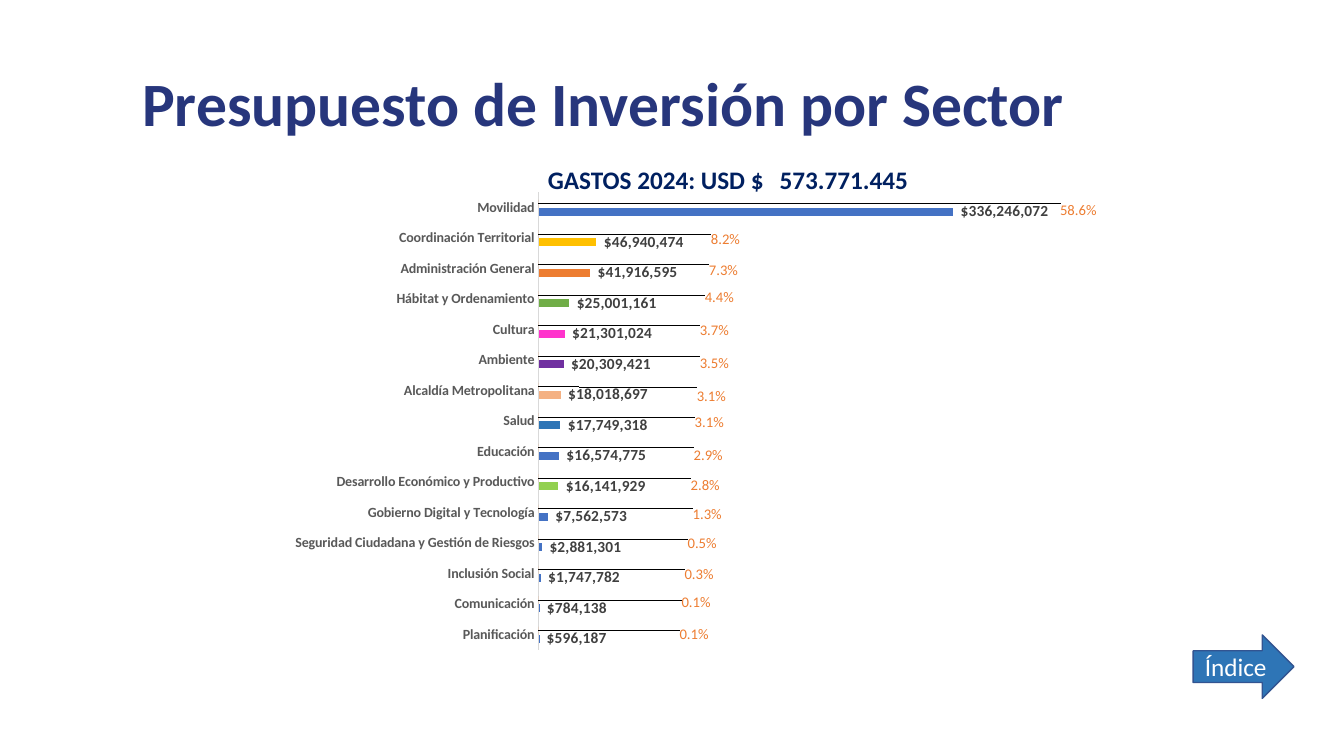
"""Build the slide with the investment budget by sector."""
from dataclasses import dataclass

from pptx import Presentation
from pptx.chart.data import CategoryChartData
from pptx.dml.color import RGBColor
from pptx.enum.chart import XL_CHART_TYPE, XL_LABEL_POSITION, XL_TICK_MARK
from pptx.enum.shapes import MSO_SHAPE
from pptx.enum.text import MSO_ANCHOR, PP_ALIGN
from pptx.oxml import parse_xml
from pptx.oxml.ns import nsdecls
from pptx.util import Cm, Pt

BAR = XL_CHART_TYPE.BAR_CLUSTERED
OUTSIDE_END = XL_LABEL_POSITION.OUTSIDE_END
NO_TICK = XL_TICK_MARK.NONE
ARROW = MSO_SHAPE.RIGHT_ARROW
LEFT, CENTER = PP_ALIGN.LEFT, PP_ALIGN.CENTER
MIDDLE = MSO_ANCHOR.MIDDLE

MONEY = r'_ "$"* #,##0_ ;_ "$"* \-#,##0_ ;_ "$"* "-"??_ ;_ @_ '
PERCENT = "0.0%"
AXIS_MAX = 400_000_000
PLOT_AREA = {"x": 0.339, "y": 0.027, "w": 0.486, "h": 0.946}

# sector, amount, share, bar colour, share label shift in % of the chart (x, y)
SECTORS = [
    ("Planificación", 596187, 0.001, None, 13.5, 0.8),
    ("Comunicación", 784138, 0.001, None, 13.7, 0.5),
    ("Inclusión Social", 1747782, 0.003, None, 14, 1),
    ("Seguridad Ciudadana y Gestión de Riesgos", 2881301, 0.005, None, 14.3, 0.9),
    ("Gobierno Digital y Tecnología", 7562573, 0.013, None, 14.8, 1.2),
    ("Desarrollo Económico y Productivo", 16141929, 0.028, "92D050", 14.6, 1.5),
    ("Educación", 16574775, 0.029, None, 14.9, 1.7),
    ("Salud", 17749318, 0.031, "2E75B6", 15, 1.1),
    ("Alcaldía Metropolitana", 18018697, 0.031, "F4B183", 15.2, 2.1),
    ("Ambiente", 20309421, 0.035, "7030A0", 15.5, 1.5),
    ("Cultura", 21301024, 0.037, "FF33CC", 15.5, 1),
    ("Hábitat y Ordenamiento", 25001161, 0.044, "70AD47", 16, 0.5),
    ("Administración General", 41916595, 0.073, "ED7D31", 16.4, 1.2),
    ("Coordinación Territorial", 46940474, 0.082, "FFC000", 16.6, 1.1),
    ("Movilidad", 336246072, 0.586, None, 51, 1.4),
]


@dataclass(frozen=True)
class Theme:
    font: str = "Calibri"
    title: str = "27367C"
    total: str = "002060"
    arrow: str = "2E75B6"
    arrow_line: str = "325491"
    white: str = "FFFFFF"
    black: str = "000000"
    axis_text: str = "595959"
    axis_line: str = "D9D9D9"
    amount_text: str = "404040"
    amount: str = "4472C4"
    share: str = "ED7D31"
    title_size: float = 44
    text_size: float = 18
    amount_size: float = 11
    share_size: float = 10.5
    axis_size: float = 10


class SlideBuilder:
    def __init__(self, s, theme):
        self.s = s
        self.theme = theme

    def style(self, font, size, color, bold=False):
        font.name = self.theme.font
        font.size = Pt(size)
        font.bold = bold
        font.color.rgb = RGBColor.from_string(color)

    def fill(self, fmt, color):
        fmt.fill.solid()
        fmt.fill.fore_color.rgb = RGBColor.from_string(color)

    def layout(self, **values):
        items = "".join(f'<c:{k} val="{v}"/>' for k, v in values.items())
        return parse_xml(f'<c:layout {nsdecls("c")}><c:manualLayout>{items}'
                         '</c:manualLayout></c:layout>')

    def title(self, text, box):
        sp = self.s.shapes.title
        sp.left, sp.top, sp.width, sp.height = map(Cm, box)
        tf = sp.text_frame
        tf.text = text
        tf.vertical_anchor = MIDDLE
        p = tf.paragraphs[0]
        p.alignment = LEFT
        p.line_spacing = 0.9
        self.style(p.runs[0].font, self.theme.title_size, self.theme.title, True)

    def total(self, text, box, tab):
        tf = self.s.shapes.add_textbox(*map(Cm, box)).text_frame
        tf.word_wrap = True
        tf.text = text
        p = tf.paragraphs[0]
        p._p.get_or_add_pPr().append(parse_xml(
            f'<a:tabLst {nsdecls("a")}><a:tab pos="{Cm(tab)}" algn="l"/></a:tabLst>'))
        self.style(p.runs[0].font, self.theme.text_size, self.theme.total, True)

    def arrow(self, text, box):
        sp = self.s.shapes.add_shape(ARROW, *map(Cm, box))
        sp.shadow.inherit = False
        self.fill(sp, self.theme.arrow)
        sp.line.color.rgb = RGBColor.from_string(self.theme.arrow_line)
        sp.line.width = Pt(1)
        tf = sp.text_frame
        tf.text = text
        tf.vertical_anchor = MIDDLE
        p = tf.paragraphs[0]
        p.alignment = CENTER
        self.style(p.runs[0].font, self.theme.text_size, self.theme.white)

    def chart(self, sectors, box):
        names, amounts, shares, colors, dx, dy = zip(*sectors)
        data = CategoryChartData()
        data.categories = names
        data.add_series("Series 1", amounts, MONEY)
        data.add_series("Series 2", shares, PERCENT)
        chart = self.s.shapes.add_chart(BAR, *map(Cm, box), data).chart
        chart.has_legend = chart.has_title = False
        self.style(chart.font, self.theme.axis_size, self.theme.black)
        plot = chart.plots[0]
        plot.gap_width, plot.overlap = 182, 0
        plot.vary_by_categories = False
        self.axes(chart)
        area = chart.element.xpath(".//c:plotArea")[0]
        for old in area.xpath("./c:layout"):
            area.remove(old)
        area.insert(0, self.layout(layoutTarget="inner", xMode="edge",
                                   yMode="edge", **PLOT_AREA))

        amount, share = plot.series
        self.fill(amount.format, self.theme.amount)
        for i, color in enumerate(colors):
            if color:
                self.fill(amount.points[i].format, color)
        self.labels(amount, MONEY, self.theme.amount_size, self.theme.amount_text, True)

        self.fill(share.format, self.theme.share)
        self.labels(share, PERCENT, self.theme.share_size, self.theme.share)
        for i in range(len(names)):
            label = share.points[i].data_label
            self.style(label.font, self.theme.share_size, self.theme.share)
            label.position = OUTSIDE_END
        for dlbl, x, y in zip(chart.element.xpath(".//c:ser[2]//c:dLbl"), dx, dy):
            dlbl.insert(1, self.layout(x=x / 100, y=y / 100))
            dlbl.insert(2, parse_xml(f'<c:numFmt {nsdecls("c")} '
                                     f'formatCode="{PERCENT}" sourceLinked="0"/>'))

    def axes(self, chart):
        axis = chart.category_axis
        axis.major_tick_mark = axis.minor_tick_mark = NO_TICK
        axis.has_major_gridlines = False
        axis.format.line.color.rgb = RGBColor.from_string(self.theme.axis_line)
        axis.format.line.width = Pt(0.75)
        self.style(axis.tick_labels.font, self.theme.axis_size, self.theme.axis_text, True)
        values = chart.value_axis
        values.minimum_scale, values.maximum_scale = 0, AXIS_MAX
        values.has_major_gridlines = False
        values.visible = False

    def labels(self, series, number_format, size, color, bold=False):
        labels = series.data_labels
        labels.show_value = True
        labels.number_format = number_format
        labels.number_format_is_linked = False
        labels.position = OUTSIDE_END
        self.style(labels.font, size, color, bold)


def main():
    prs = Presentation()
    prs.slide_width, prs.slide_height = Cm(33.87), Cm(19.05)
    s = prs.slides.add_slide(prs.slide_layouts[5])
    slide = SlideBuilder(s, Theme())
    slide.title("Presupuesto de Inversión por Sector", (3.33, 1.02, 29.29, 3.33))
    slide.arrow("Índice", (30.07, 16, 2.54, 1.6))
    slide.total("GASTOS 2024: USD $\t573.771.445", (13.56, 4.01, 10.01, 1.02), 5.84)
    slide.chart(SECTORS, (4.9, 4.52, 25.58, 12.19))
    prs.save("out.pptx")


if __name__ == "__main__":
    main()
